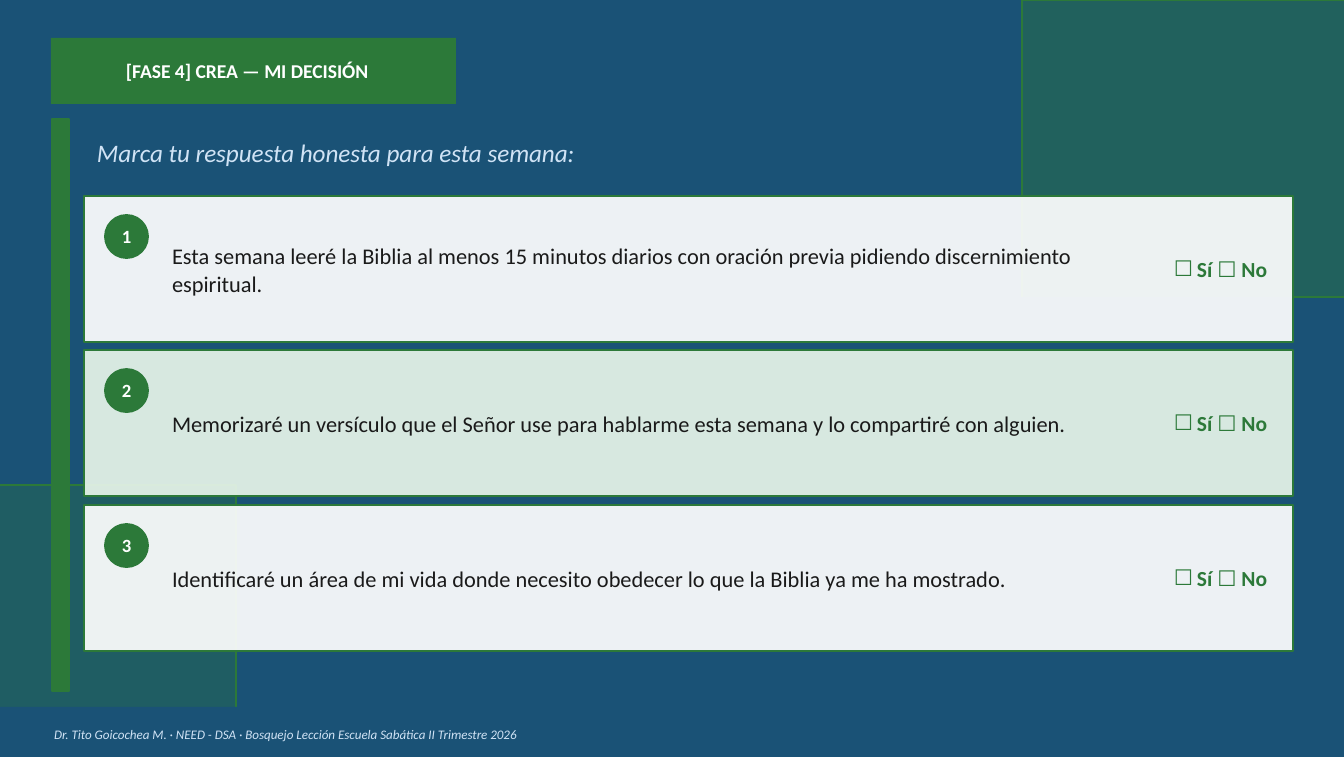
from dataclasses import dataclass

from lxml.etree import SubElement
from pptx import Presentation
from pptx.dml.color import RGBColor
from pptx.enum.shapes import MSO_SHAPE
from pptx.enum.text import MSO_ANCHOR, PP_ALIGN
from pptx.oxml.ns import qn
from pptx.util import Emu, Pt

EMU_PER_PX = 914400 / 134.4


@dataclass(frozen=True)
class Theme:
    navy: str = "1A5276"
    green: str = "2C7939"
    white: str = "FFFFFF"
    mint: str = "E8F5EA"
    sky: str = "D0E3F5"
    ink: str = "1A1A1A"
    font: str = "Calibri"
    symbol_font: str = "Cabin"
    badge: float = 10.5
    prompt: float = 13.5
    number: float = 10
    body: float = 12
    choice: float = 11.5
    footer: float = 7
    line: float = 1


THEME = Theme()

COMMITMENTS = [
    ("Esta semana leeré la Biblia al menos 15 minutos diarios con oración "
     "previa pidiendo discernimiento espiritual.", THEME.white),
    ("Memorizaré un versículo que el Señor use para hablarme esta semana "
     "y lo compartiré con alguien.", THEME.mint),
    ("Identificaré un área de mi vida donde necesito obedecer lo que la "
     "Biblia ya me ha mostrado.", THEME.white),
]


def px(value):
    return Emu(round(value * EMU_PER_PX))


def add_block(page, kind, bounds, fill, line=None, opacity=None):
    block = page.shapes.add_shape(kind, *map(px, bounds))
    block.shadow.inherit = False
    block.fill.solid()
    block.fill.fore_color.rgb = RGBColor.from_string(fill)
    if opacity is not None:
        color = block.fill._xPr.find(qn("a:solidFill"))[0]
        SubElement(color, qn("a:alpha"), val=str(opacity * 1000))
    if line is None:
        block.line.fill.background()
    else:
        block.line.color.rgb = RGBColor.from_string(line)
        block.line.width = Pt(THEME.line)
    return block


def add_outline(page, start, *points):
    builder = page.shapes.build_freeform(*start, scale=EMU_PER_PX)
    builder.add_line_segments(points, close=False)
    outline = builder.convert_to_shape()
    outline.shadow.inherit = False
    outline.fill.background()
    outline.line.color.rgb = RGBColor.from_string(THEME.green)
    outline.line.width = Pt(THEME.line)


def add_span(para, text, size, color, bold=False, italic=False, font=THEME.font):
    span = para.add_run()
    span.text = text
    span.font.name = font
    span.font.size = Pt(size)
    span.font.bold = bold
    span.font.italic = italic
    span.font.color.rgb = RGBColor.from_string(color)


def prepare_text(box, left=0, align=PP_ALIGN.LEFT, wrap=True):
    frame = box.text_frame
    frame.margin_left = px(left)
    frame.margin_top = frame.margin_right = frame.margin_bottom = 0
    frame.vertical_anchor = MSO_ANCHOR.MIDDLE
    frame.word_wrap = wrap
    para = frame.paragraphs[0]
    para.alignment = align
    return para


def add_text_box(page, bounds):
    return prepare_text(page.shapes.add_textbox(*map(px, bounds)))


def add_checkbox_bullet(para):
    properties = para._p.get_or_add_pPr()
    properties.set("marL", str(px(25)))
    properties.set("indent", str(-px(23)))
    SubElement(properties, qn("a:buFont"), typeface=THEME.symbol_font)
    SubElement(properties, qn("a:buChar"), char="☐")


def add_choices(page, top, height):
    para = add_text_box(page, (1172, top, 110, height))
    add_checkbox_bullet(para)
    for text, font in (("Sí ", THEME.font), ("☐ ", THEME.symbol_font),
                       ("No", THEME.font)):
        add_span(para, text, THEME.choice, THEME.green, bold=True, font=font)


def add_commitment(page, number, top, text, fill):
    height = 146
    add_block(page, MSO_SHAPE.RECTANGLE, (84, top, 1209, height), fill,
              line=THEME.green, opacity=92)
    disc = add_block(page, MSO_SHAPE.OVAL, (105, top + 19, 43, 43),
                     THEME.green, line=THEME.green)
    para = prepare_text(disc, align=PP_ALIGN.CENTER, wrap=False)
    add_span(para, str(number), THEME.number, THEME.white, bold=True)
    para = add_text_box(page, (172, top, 960, height))
    para.line_spacing = Pt(15)
    add_span(para, text, THEME.body, THEME.ink)
    add_choices(page, top, height)


def add_backdrop(page):
    rectangle = MSO_SHAPE.RECTANGLE
    add_block(page, rectangle, (0, 0, 1344, 757), THEME.navy)
    add_block(page, rectangle, (1022, 0, 322, 297), THEME.green, opacity=40)
    add_outline(page, (1293, 297), (1344, 297))
    add_outline(page, (1344, 0), (1022, 0), (1022, 297))
    add_block(page, rectangle, (0, 485, 236, 222), THEME.green, opacity=30)
    add_outline(page, (236, 757), (236, 485), (0, 485))
    add_block(page, rectangle, (52, 119, 17, 572), THEME.green, line=THEME.green)


def add_heading(page):
    badge = add_block(page, MSO_SHAPE.RECTANGLE, (51, 38, 405, 66), THEME.green)
    add_span(prepare_text(badge, left=75), "[FASE 4] CREA — MI DECISIÓN",
             THEME.badge, THEME.white, bold=True)
    add_span(add_text_box(page, (97, 132, 560, 40)),
             "Marca tu respuesta honesta para esta semana:",
             THEME.prompt, THEME.sky, italic=True)


def add_footer(page):
    add_block(page, MSO_SHAPE.RECTANGLE, (0, 707, 1344, 50), THEME.navy)
    add_span(add_text_box(page, (54, 724, 560, 20)),
             "Dr. Tito Goicochea M. · NEED - DSA · Bosquejo Lección "
             "Escuela Sabática II Trimestre 2026",
             THEME.footer, THEME.sky, italic=True)


def main():
    deck = Presentation()
    deck.slide_width, deck.slide_height = px(1344), px(757)
    page = deck.slides.add_slide(deck.slide_layouts[6])
    add_backdrop(page)
    add_heading(page)
    for index, (text, fill) in enumerate(COMMITMENTS):
        add_commitment(page, index + 1, 196 + index * 309 // 2, text, fill)
    add_footer(page)
    deck.save("out.pptx")


if __name__ == "__main__":
    main()
